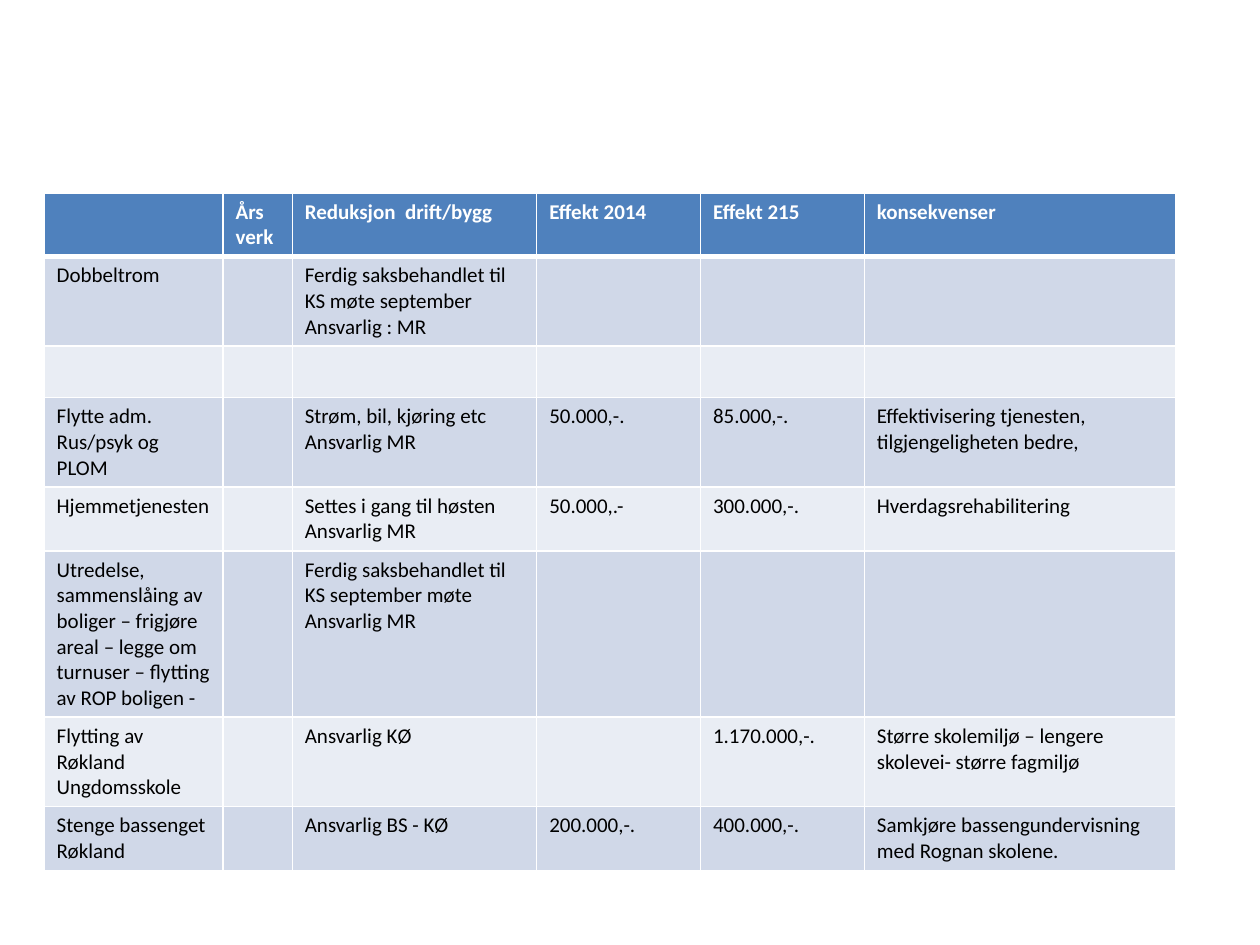
from lxml.etree import SubElement as Sub
from pptx import Presentation
from pptx.dml.color import RGBColor as Rgb
from pptx.oxml.ns import qn
from pptx.util import Inches, Pt

HUES = {"head": "4F81BD", "dark": "D0D8E8", "light": "E9EDF4",
        "white": "FFFFFF", "black": "000000"}
COLS = [1.42, 0.55, 1.94, 1.3, 1.3, 2.47]
ROW = 0.41
ROWS = [
    ["", "Års\nverk", "Reduksjon  drift/bygg", "Effekt 2014", "Effekt 215",
     "konsekvenser"],
    ["Dobbeltrom", "",
     "Ferdig saksbehandlet til KS møte september\nAnsvarlig : MR", "", "", ""],
    [""] * len(COLS),
    ["Flytte adm. Rus/psyk og PLOM", "",
     "Strøm, bil, kjøring etc\nAnsvarlig MR", "50.000,-.", "85.000,-.",
     "Effektivisering tjenesten, tilgjengeligheten bedre,"],
    ["Hjemmetjenesten", "", "Settes i gang til høsten\nAnsvarlig MR",
     "50.000,.-", "300.000,-.", "Hverdagsrehabilitering"],
    ["Utredelse, sammenslåing av boliger – frigjøre areal – legge om "
     "turnuser – flytting av ROP boligen -", "",
     "Ferdig saksbehandlet til KS september møte\nAnsvarlig MR", "", "", ""],
    ["Flytting av Røkland Ungdomsskole", "", "Ansvarlig KØ", "",
     "1.170.000,-.", "Større skolemiljø – lengere skolevei- større fagmiljø"],
    ["Stenge bassenget Røkland", "", "Ansvarlig BS - KØ", "200.000,-.",
     "400.000,-.", "Samkjøre bassengundervisning med Rognan skolene."],
]


class Deck:
    """Holds the text style and the current slide."""

    def __init__(self, font, size):
        self.font, self.size = font, Pt(size)
        self.prs = Presentation()
        self.prs.slide_width, self.prs.slide_height = Inches(10), Inches(7.5)
        self.slide = self.prs.slides.add_slide(self.prs.slide_layouts[6])

    def table(self, left, top, cols, rows, high):
        grid = self.slide.shapes.add_table(
            len(rows), len(cols), Inches(left), Inches(top),
            Inches(sum(cols)), Inches(high * len(rows))).table
        for col, wide in zip(grid.columns, cols):
            col.width = Inches(wide)
        for r, row in enumerate(rows):
            grid.rows[r].height = Inches(high)
            for c, text in enumerate(row):
                self.cell(grid.cell(r, c), text, r)

    def cell(self, cell, text, r):
        head = r == 0
        self.edge(cell, top=3 if r == 1 else 1, base=3 if head else 1)
        cell.fill.solid()
        hue = "head" if head else "dark" if r % 2 else "light"
        cell.fill.fore_color.rgb = Rgb.from_string(HUES[hue])
        if not text:
            return
        cell.text = text
        for para in cell.text_frame.paragraphs:
            font = para.font
            font.name, font.size, font.bold = self.font, self.size, head
            ink = HUES["white" if head else "black"]
            font.color.rgb = Rgb.from_string(ink)

    def edge(self, cell, top, base):
        props = cell._tc.get_or_add_tcPr()
        for side, wide in zip("LRTB", (1, 1, top, base)):
            line = Sub(props, qn(f"a:ln{side}"), w=str(Pt(wide)))
            fill = Sub(line, qn("a:solidFill"))
            Sub(fill, qn("a:srgbClr"), val=HUES["white"])

    def save(self):
        self.prs.save("out.pptx")


def main():
    deck = Deck("Calibri", 12)
    deck.table(0.35, 1.53, COLS, ROWS, ROW)
    deck.save()


if __name__ == "__main__":
    main()
